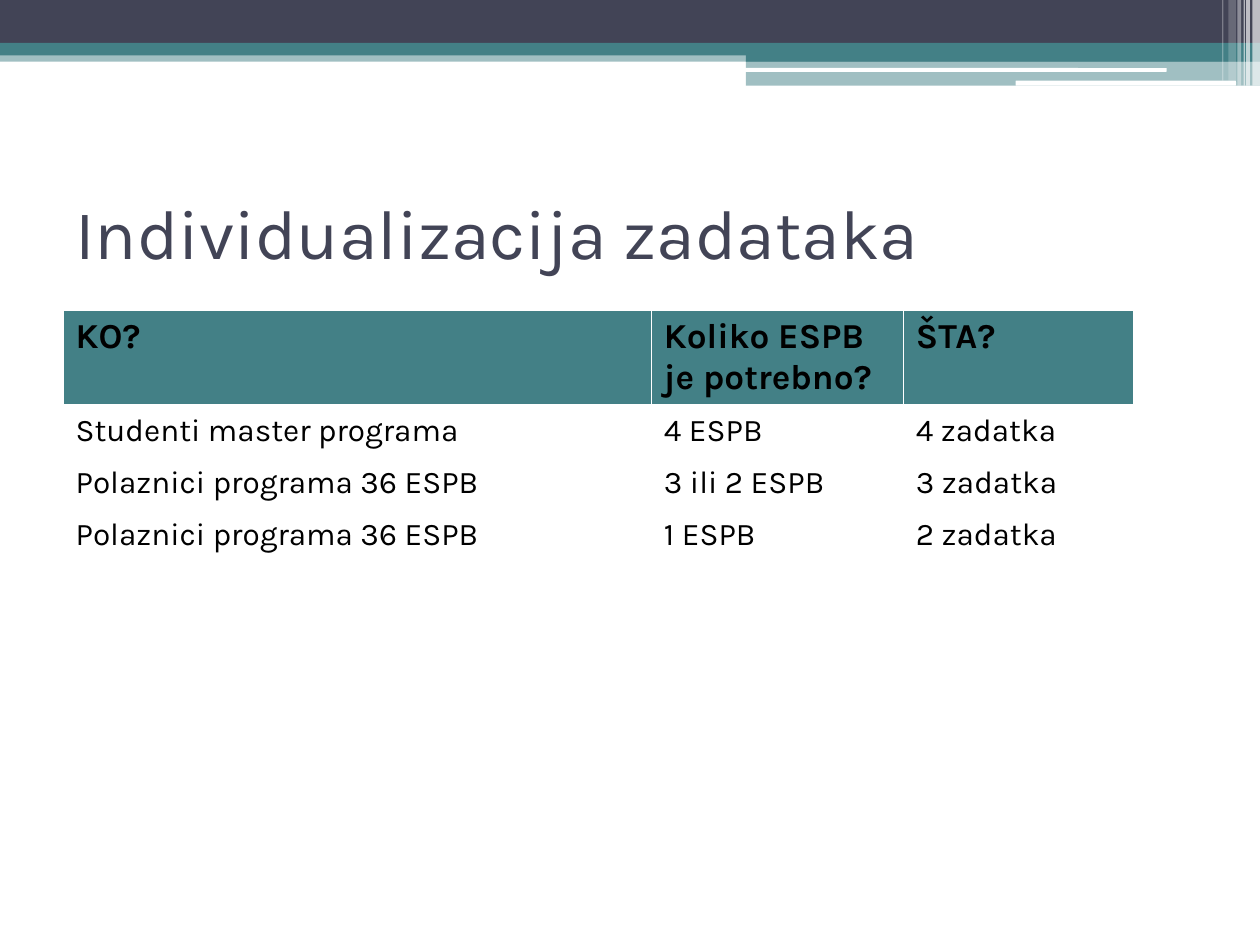
from lxml import etree
from pptx import Presentation
from pptx.dml.color import RGBColor
from pptx.enum.shapes import MSO_SHAPE
from pptx.enum.text import MSO_ANCHOR
from pptx.oxml.ns import qn
from pptx.util import Inches, Pt

RECTANGLE = MSO_SHAPE.RECTANGLE
ROUNDED = MSO_SHAPE.ROUNDED_RECTANGLE
MIDDLE = MSO_ANCHOR.MIDDLE

FONT = "Karla"
NAVY, TEAL, WHITE, BLACK = "424456", "438086", "FFFFFF", "000000"

# left, top, width, height, colour, opacity in percent
BANDS = [
    (0, 0.4, 10, 0.09, TEAL, 50),
    (0, 0, 10, 0.34, NAVY, 100),
    (0, 0.34, 10, 0.1, TEAL, 100),
    (5.92, 0.39, 4.08, 0.1, TEAL, 100),
    (5.92, 0.48, 4.08, 0.2, TEAL, 50),
]
WHITE_BARS = [(5.91, 0.54, 3.35, 0.03), (8.06, 0.64, 1.75, 0.04)]
# left, width, height, opacity in percent
STRIPES = [
    (9.94, 0.06, 0.68, 65),
    (9.89, 0.03, 0.68, 65),
    (9.87, 0.01, 0.68, 60),
    (9.82, 0.03, 0.68, 40),
    (9.75, 0.06, 0.64, 20),
    (9.7, 0.01, 0.64, 30),
]

COLUMN_WIDTHS = [4.67, 2, 1.83]
ROW_HEIGHTS = [0.73, 0.41, 0.41, 0.41]
ROWS = [
    ("KO?", "Koliko ESPB je potrebno?", "ŠTA?"),
    ("Studenti master programa", "4 ESPB", "4 zadatka"),
    ("Polaznici programa 36 ESPB", "3 ili 2 ESPB", "3 zadatka"),
    ("Polaznici programa 36 ESPB", "1 ESPB", "2 zadatka"),
]


def color(value):
    return RGBColor.from_string(value)


def add_block(slide, left, top, width, height, fill, opacity=100, kind=RECTANGLE):
    shape = slide.shapes.add_shape(
        kind, Inches(left), Inches(top), Inches(width), Inches(height))
    shape.shadow.inherit = False
    shape.line.fill.background()
    shape.fill.solid()
    shape.fill.fore_color.rgb = color(fill)
    if opacity < 100:
        fill_color = shape.fill._xPr.find(".//" + qn("a:srgbClr"))
        etree.SubElement(fill_color, qn("a:alpha"), val=str(opacity * 1000))


def set_text(text_frame, text, size, text_color, bold=False):
    text_frame.text = text
    for run in text_frame.paragraphs[0].runs:
        run.font.name = FONT
        run.font.size = Pt(size)
        run.font.bold = bold
        run.font.color.rgb = color(text_color)


def add_title(slide, text):
    box = slide.shapes.add_textbox(
        Inches(0.5), Inches(1.25), Inches(9), Inches(1.17))
    box.text_frame.word_wrap = True
    box.text_frame.vertical_anchor = MIDDLE
    set_text(box.text_frame, text, 40, NAVY)


def set_borders(cell, bottom_width):
    properties = cell._tc.get_or_add_tcPr()
    widths = {"a:lnL": 1, "a:lnR": 1, "a:lnT": 1, "a:lnB": bottom_width}
    for position, (side, width) in enumerate(widths.items()):
        line = etree.Element(qn(side), w=str(Pt(width)))
        fill = etree.SubElement(line, qn("a:solidFill"))
        etree.SubElement(fill, qn("a:srgbClr"), val=WHITE)
        properties.insert(position, line)


def add_task_table(slide):
    table = slide.shapes.add_table(
        len(ROWS), len(COLUMN_WIDTHS), Inches(0.5), Inches(2.46),
        Inches(sum(COLUMN_WIDTHS)), Inches(sum(ROW_HEIGHTS))).table
    table.horz_banding = False
    for column, width in zip(table.columns, COLUMN_WIDTHS):
        column.width = Inches(width)
    for row_index, (row, height) in enumerate(zip(table.rows, ROW_HEIGHTS)):
        row.height = Inches(height)
        is_header = row_index == 0
        for cell, text in zip(row.cells, ROWS[row_index]):
            set_text(cell.text_frame, text, 20 if is_header else 18, BLACK, is_header)
            if is_header:
                cell.fill.solid()
                cell.fill.fore_color.rgb = color(TEAL)
                set_borders(cell, 3)
            else:
                cell.fill.background()
                set_borders(cell, 3 if row_index == 0 else 1)


def main():
    presentation = Presentation()
    presentation.slide_width = Inches(10)
    presentation.slide_height = Inches(7.5)
    slide = presentation.slides.add_slide(presentation.slide_layouts[6])

    # Header decoration
    for band in BANDS:
        add_block(slide, *band)
    for bar in WHITE_BARS:
        add_block(slide, *bar, WHITE, kind=ROUNDED)
    for left, width, height, opacity in STRIPES:
        add_block(slide, left, 0, width, height, WHITE, opacity)

    # Content
    add_title(slide, "Individualizacija zadataka")
    add_task_table(slide)

    presentation.save("out.pptx")


if __name__ == "__main__":
    main()
